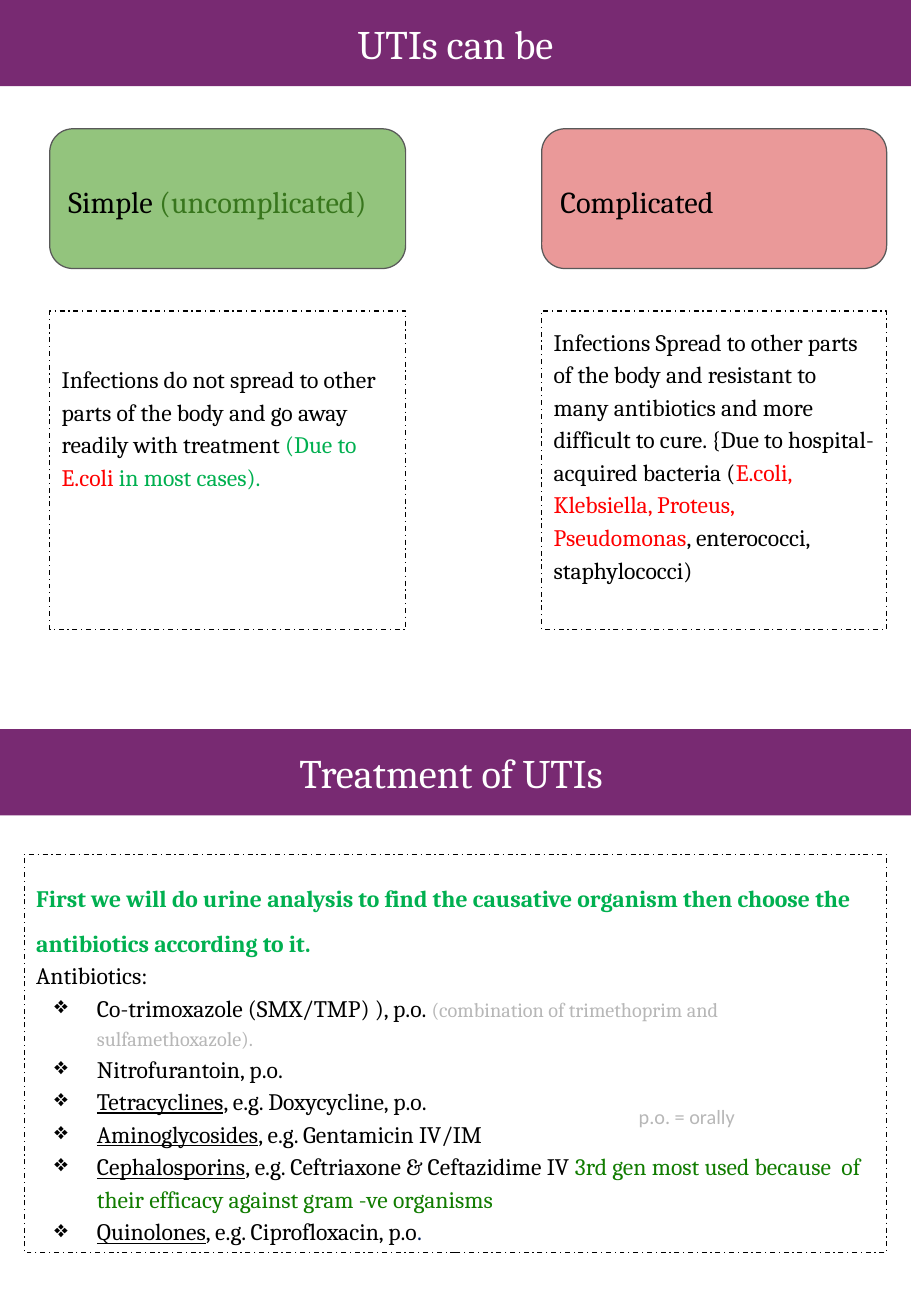
import pptx
import pptx.dml.color
import pptx.enum.dml
import pptx.enum.shapes
import pptx.enum.text
import pptx.oxml
import pptx.oxml.ns
import pptx.util
from dataclasses import dataclass

ALIGN = pptx.enum.text.PP_ALIGN
ANCHOR = pptx.enum.text.MSO_ANCHOR
SHAPE = pptx.enum.shapes.MSO_SHAPE


@dataclass(frozen=True)
class Theme:
    serif: str = "Cambria"
    sans: str = "Calibri"
    # Type sizes in points
    title: int = 24
    heading: int = 18
    body: int = 14
    small: int = 12
    # Colours
    black: str = "000000"
    white: str = "FFFFFF"
    purple: str = "782A72"
    outline: str = "595959"
    simple_fill: str = "93C47D"
    complicated_fill: str = "EA9999"
    olive: str = "38761D"
    red: str = "FF0000"
    green: str = "00B050"
    forest: str = "117C00"
    grey: str = "B7B7B7"
    navy: str = "002060"


THEME = Theme()


@dataclass(frozen=True)
class Span:
    text: str
    colour: str = THEME.black
    size: int = THEME.body
    font: str = THEME.serif
    bold: bool = False
    underline: bool = False


def px(value):
    """100 px to the inch."""
    return pptx.util.Emu(value * 9144)


def rgb(colour):
    return pptx.dml.color.RGBColor.from_string(colour)


class SlideBuilder:
    def __init__(self, presentation, theme):
        self.theme = theme
        self.slide = presentation.slides.add_slide(presentation.slide_layouts[5])

    def frame(self, shape, anchor, inset_top=10):
        text_frame = shape.text_frame
        text_frame.auto_size = pptx.enum.text.MSO_AUTO_SIZE.NONE
        text_frame.word_wrap = True
        text_frame.vertical_anchor = anchor
        text_frame.margin_left = text_frame.margin_right = px(10)
        text_frame.margin_top, text_frame.margin_bottom = px(inset_top), px(10)
        return text_frame

    def add_spans(self, paragraph, spans, line_spacing=1.15, align=ALIGN.LEFT):
        paragraph.alignment = align
        paragraph.line_spacing = line_spacing
        for span in spans:
            run = paragraph.add_run()
            run.text = span.text
            run.font.name = span.font
            run.font.size = pptx.util.Pt(span.size)
            run.font.bold = span.bold
            run.font.underline = span.underline
            run.font.color.rgb = rgb(span.colour)

    def bullet(self, paragraph):
        properties = paragraph._p.get_or_add_pPr()
        properties.set("marL", str(px(50)))
        properties.set("indent", str(px(-35)))
        namespace = pptx.oxml.ns.nsdecls("a")
        properties.append(pptx.oxml.parse_xml(
            f'<a:buClr {namespace}><a:srgbClr val="{self.theme.black}"/></a:buClr>'))
        properties.append(pptx.oxml.parse_xml(f'<a:buChar {namespace} char="❖"/>'))

    def box(self, kind, left, top, width, height, fill=None, line=None):
        shape = self.slide.shapes.add_shape(kind, px(left), px(top), px(width), px(height))
        shape.shadow.inherit = False
        if fill:
            shape.fill.solid()
            shape.fill.fore_color.rgb = rgb(fill)
        else:
            shape.fill.background()
        if line:
            shape.line.color.rgb = rgb(line)
            shape.line.width = pptx.util.Pt(0.75)
        else:
            shape.line.fill.background()
        return shape

    def banner(self, text, top, is_title=False):
        if is_title:
            shape = self.slide.shapes.title
            shape.left, shape.top, shape.width, shape.height = map(px, (0, top, 750, 71))
            shape.fill.solid()
            shape.fill.fore_color.rgb = rgb(self.theme.purple)
        else:
            shape = self.box(SHAPE.RECTANGLE, 0, top, 750, 71, self.theme.purple)
        text_frame = self.frame(shape, ANCHOR.MIDDLE)
        span = Span(text, self.theme.white, self.theme.title)
        self.add_spans(text_frame.paragraphs[0], [span], 1.0, ALIGN.CENTER)

    def card(self, left, width, fill, spans):
        shape = self.box(SHAPE.ROUNDED_RECTANGLE, left, 106, width, 115,
                         fill, self.theme.outline)
        self.add_spans(self.frame(shape, ANCHOR.MIDDLE).paragraphs[0], spans)

    def panel(self, left, top, width, height, inset_top=10):
        shape = self.box(SHAPE.RECTANGLE, left, top, width, height, line=self.theme.black)
        shape.line.dash_style = pptx.enum.dml.MSO_LINE.DASH_DOT
        return self.frame(shape, ANCHOR.TOP, inset_top)

    def note(self, left, top, width, height, span):
        shape = self.slide.shapes.add_textbox(px(left), px(top), px(width), px(height))
        self.add_spans(self.frame(shape, ANCHOR.TOP).paragraphs[0], [span], 1.0)


def main():
    theme = THEME
    presentation = pptx.Presentation()
    presentation.slide_width, presentation.slide_height = px(750), px(1083)
    builder = SlideBuilder(presentation, theme)

    # Banners
    builder.banner("UTIs can be", 0, is_title=True)
    builder.banner("Treatment of UTIs ", 600)

    # Two kinds of infection: card above, description below
    kinds = [
        (41, 293, theme.simple_fill, 41,
         [Span("Simple ", size=theme.heading),
          Span("(uncomplicated)", theme.olive, theme.heading)],
         [Span("Infections do not spread to other parts of the body and go away "
               "readily with treatment"),
          Span(" (Due to ", theme.green),
          Span("E.coli ", theme.red),
          Span("in most cases).", theme.green)]),
        (446, 284, theme.complicated_fill, 10,
         [Span("Complicated", size=theme.heading)],
         [Span("Infections Spread to other parts of the body and resistant to many "
               "antibiotics and more difficult to cure. {Due to hospital- acquired "
               "bacteria ("),
          Span("E.coli, Klebsiella, Proteus, Pseudomonas", theme.red),
          Span(", enterococci, staphylococci)")]),
    ]
    for left, width, fill, inset_top, heading, description in kinds:
        builder.card(left, width, fill, heading)
        text_frame = builder.panel(left, 256, width, 262, inset_top)
        builder.add_spans(text_frame.paragraphs[0], description)

    # Treatment panel
    text_frame = builder.panel(20, 703, 710, 328)
    advice = ("First we will do urine analysis to find the causative organism "
              "then choose the antibiotics according to it.")
    builder.add_spans(text_frame.paragraphs[0], [Span(advice, theme.green, bold=True)], 1.6)
    builder.add_spans(text_frame.add_paragraph(), [Span("Antibiotics:")])
    antibiotics = [
        [Span("Co-trimoxazole (SMX/TMP) ), p.o. "),
         Span("(combination of trimethoprim and sulfamethoxazole).",
              theme.grey, theme.small)],
        [Span("Nitrofurantoin, p.o.")],
        [Span("Tetracyclines", underline=True), Span(", e.g. Doxycycline, p.o.")],
        [Span("Aminoglycosides", underline=True), Span(", e.g. Gentamicin IV/IM")],
        [Span("Cephalosporins", underline=True),
         Span(", e.g. Ceftriaxone & Ceftazidime IV "),
         Span("3rd gen most used because  of their efficacy against gram -ve organisms",
              theme.forest)],
        [Span("Quinolones", underline=True), Span(", e.g. Ciprofloxacin, p.o"),
         Span(".", theme.navy)],
    ]
    for spans in antibiotics:
        paragraph = text_frame.add_paragraph()
        builder.add_spans(paragraph, spans)
        builder.bullet(paragraph)

    # Abbreviation
    builder.note(516, 899, 117, 40,
                 Span("p.o. = orally", theme.grey, theme.small, theme.sans))

    presentation.save("out.pptx")


if __name__ == "__main__":
    main()
